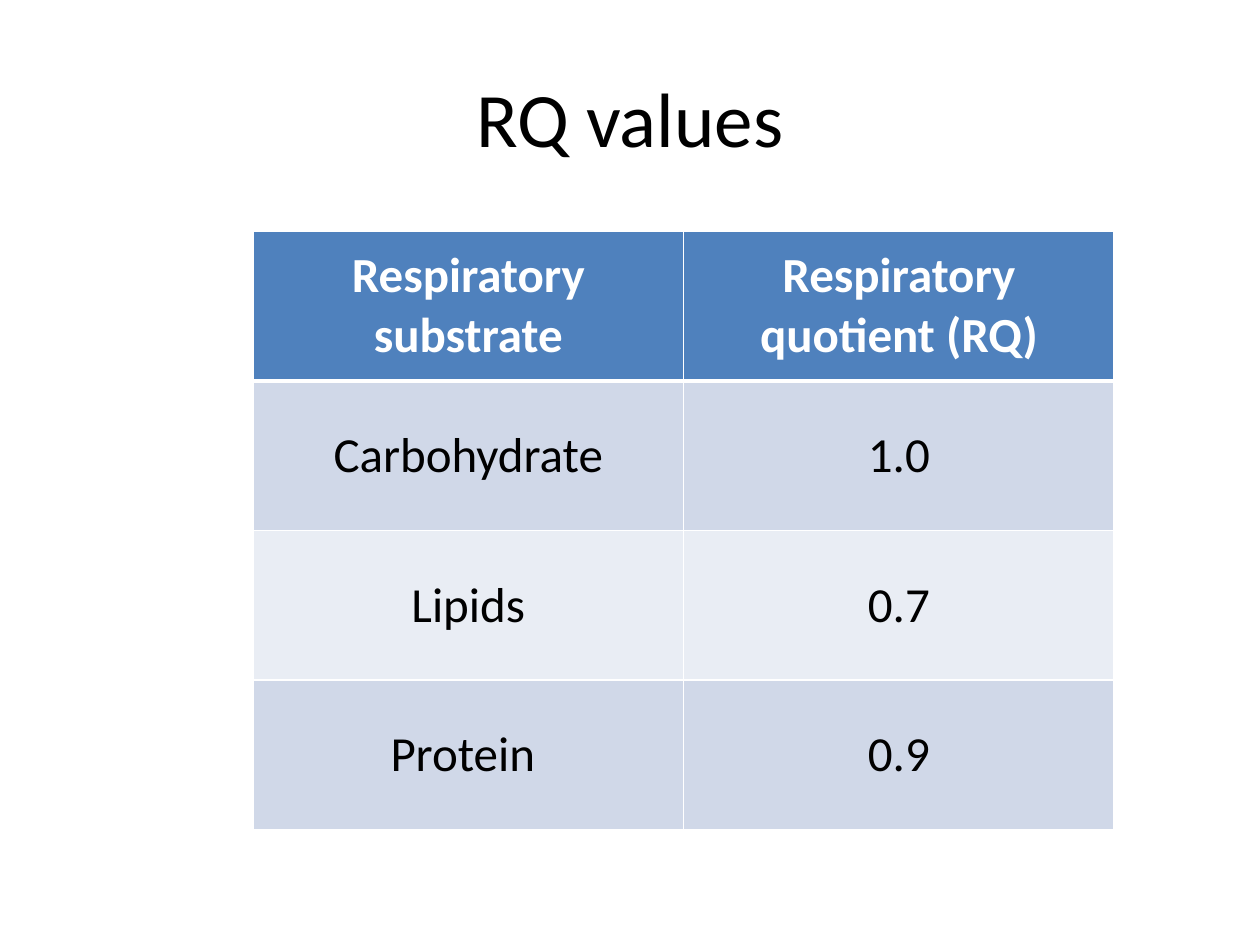
from dataclasses import dataclass

from lxml.etree import SubElement
from pptx import Presentation
from pptx.dml.color import RGBColor
from pptx.enum.text import MSO_ANCHOR, PP_ALIGN
from pptx.oxml.ns import qn
from pptx.util import Cm, Pt

COLORS = {
    "text": "000000",
    "white": "FFFFFF",
    "header": "4F81BD",
    "odd": "D0D8E8",
    "even": "E9EDF4",
}


@dataclass
class Row:
    substrate: str
    quotient: str
    fill: str
    color: str = "text"
    bold: bool = False
    top: float = 1
    bottom: float = 1


ROWS = [
    Row("Respiratory substrate", "Respiratory quotient (RQ)", "header", "white", True, bottom=3),
    Row("Carbohydrate", "1.0", "odd", top=3),
    Row("Lipids", "0.7", "even"),
    Row("Protein ", "0.9", "odd"),
]


def write(tf, text: str, *, size: float, color: str = "text", bold: bool = False) -> None:
    """Put centred, formatted text in a text frame."""
    tf.word_wrap = True
    p = tf.paragraphs[0]
    p.alignment = PP_ALIGN.CENTER
    r = p.add_run()
    r.text = text
    r.font.name = "Calibri"
    r.font.size = Pt(size)
    r.font.bold = bold
    r.font.color.rgb = RGBColor.from_string(COLORS[color])


def add_borders(cell, top: float, bottom: float) -> None:
    """Give a cell white lines on all four sides."""
    pr = cell._tc.get_or_add_tcPr()
    for side, width in (("L", 1), ("R", 1), ("T", top), ("B", bottom)):
        ln = SubElement(pr, qn(f"a:ln{side}"), w=str(Pt(width)))
        fill = SubElement(ln, qn("a:solidFill"))
        SubElement(fill, qn("a:srgbClr"), val=COLORS["white"])


def fill_row(cells, row: Row) -> None:
    """Write and format one row of the table."""
    for cell, text in zip(cells, (row.substrate, row.quotient)):
        write(cell.text_frame, text, size=28, color=row.color, bold=row.bold)
        cell.vertical_anchor = MSO_ANCHOR.MIDDLE
        add_borders(cell, row.top, row.bottom)
        cell.fill.solid()
        cell.fill.fore_color.rgb = RGBColor.from_string(COLORS[row.fill])


def main() -> None:
    """Build the slide of RQ values."""
    prs = Presentation()
    prs.slide_width, prs.slide_height = Cm(25.4), Cm(19.05)
    s = prs.slides.add_slide(prs.slide_layouts[6])

    sp = s.shapes.add_textbox(Cm(1.27), Cm(0.76), Cm(22.86), Cm(3.18))
    sp.text_frame.vertical_anchor = MSO_ANCHOR.MIDDLE
    write(sp.text_frame, "RQ values", size=44)

    table = s.shapes.add_table(len(ROWS), 2, Cm(5.1), Cm(4.66), Cm(17.36), Cm(12.07)).table
    for tr, row in zip(table.rows, ROWS):
        fill_row(tr.cells, row)

    prs.save("out.pptx")


if __name__ == "__main__":
    main()
